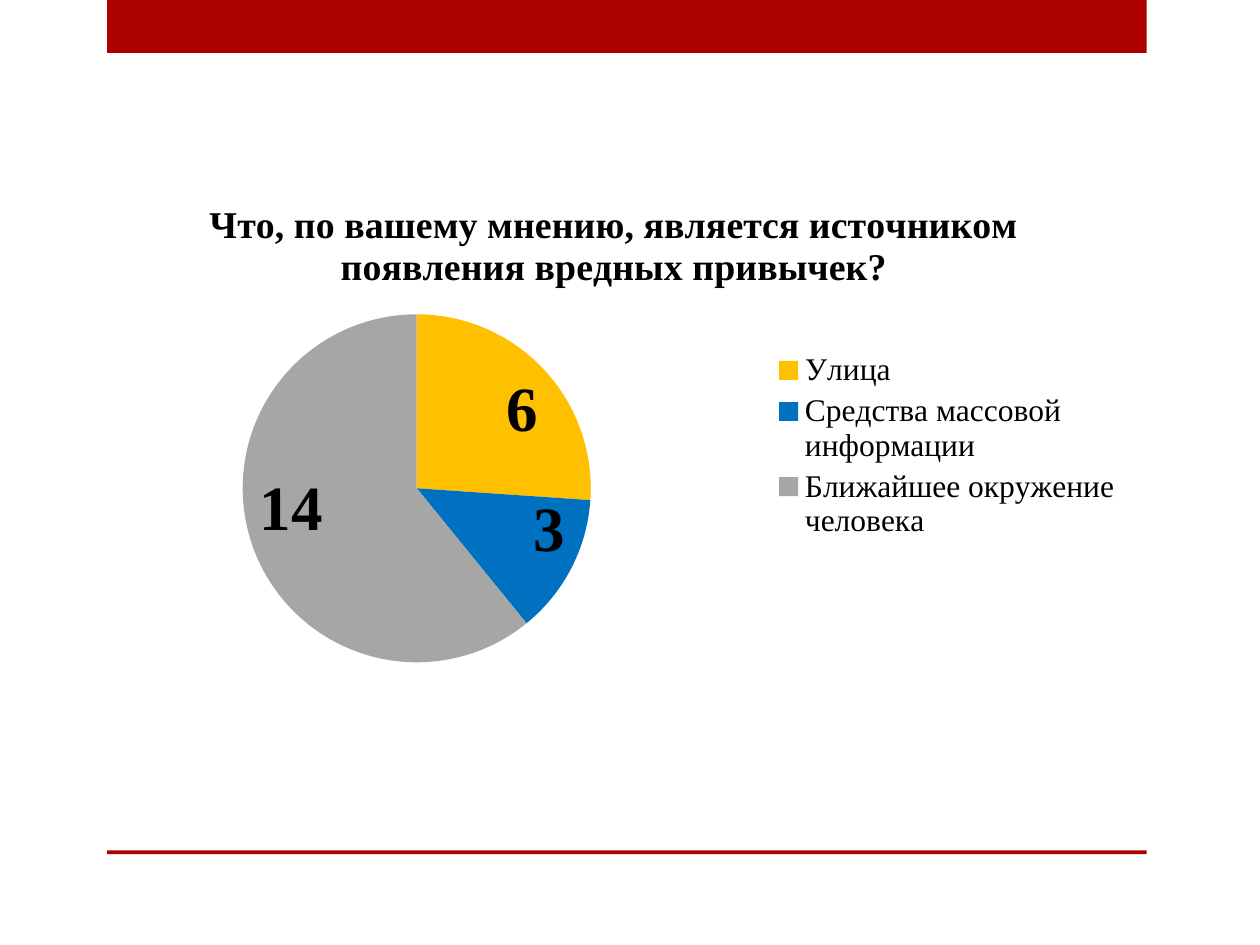
"""Build a survey slide with a pie chart between two red bars."""
from pptx import Presentation, util as u
from pptx.chart.data import CategoryChartData
from pptx.dml.color import RGBColor
from pptx.enum import chart as ch, shapes
from pptx.oxml import parse_xml
from pptx.oxml.ns import nsdecls

TITLE = "Что, по вашему мнению, является источником появления вредных привычек?"
RED = RGBColor(0xAD, 0x01, 0x01)
BLACK = RGBColor(0, 0, 0)
GOLD = RGBColor(0xFF, 0xC0, 0x00)
BLUE = RGBColor(0x00, 0x70, 0xC0)
GRAY = RGBColor(0xA6, 0xA6, 0xA6)
FACE = "Times New Roman"
DATA = [
    ("Улица", 6, GOLD),
    ("Средства массовой информации", 3, BLUE),
    ("Ближайшее окружение человека", 14, GRAY),
]
BARS = [(0, 0.42), (6.75, 0.03)]
CHART = (0.75, 1.39, 8.25, 4.25)
PIE = (0.14, 0.26, 0.34, 0.65)
KEY = (0.65, 0.32, 0.34, 0.37)


def style(font, size, bold=False, color=BLACK):
    font.name, font.size, font.bold = FACE, u.Pt(size), bold
    font.color.rgb = color


def write(frame, words, size=18, **form):
    frame.text = words
    style(frame.paragraphs[0].runs[0].font, size, **form)


def layout(box, inner=False):
    target = '<c:layoutTarget val="inner"/>' if inner else ""
    modes = "".join(f'<c:{k}Mode val="edge"/>' for k in "xy")
    sizes = "".join(f'<c:{k} val="{v}"/>' for k, v in zip("xywh", box))
    return parse_xml(f'<c:layout {nsdecls("c")}><c:manualLayout>'
                     f'{target}{modes}{sizes}</c:manualLayout></c:layout>')


def add_bar(slide, top, high):
    box = map(u.Inches, (0.85, top, 8.25, high))
    bar = slide.shapes.add_shape(shapes.MSO_SHAPE.RECTANGLE, *box)
    bar.shadow.inherit = False
    bar.fill.solid()
    bar.fill.fore_color.rgb = RED
    bar.line.fill.background()


def add_pie(slide):
    names, vals, colors = zip(*DATA)
    data = CategoryChartData()
    data.categories = names
    data.add_series(TITLE, vals)
    chart = slide.shapes.add_chart(
        ch.XL_CHART_TYPE.PIE, *map(u.Inches, CHART), data).chart
    style(chart.font, 18)
    write(chart.chart_title.text_frame, TITLE, size=21.6, bold=True)
    chart.chart_title.include_in_layout = False

    chart.has_legend = True
    key = chart.legend
    key.position = ch.XL_LEGEND_POSITION.RIGHT
    key.include_in_layout = False
    style(key.font, 18)
    key._element.find("{*}legendPos").addnext(layout(KEY))

    area = chart._chartSpace.chart.plotArea
    for old in area.findall("{*}layout"):
        area.remove(old)
    area.insert(0, layout(PIE, inner=True))

    plot = chart.plots[0]
    plot.vary_by_categories = True
    for i, color in enumerate(colors):
        fill = plot.series[0].points[i].format.fill
        fill.solid()
        fill.fore_color.rgb = color
    plot.has_data_labels = True
    tags = plot.data_labels
    tags.show_value = True
    tags.show_percentage = False
    tags.position = ch.XL_LABEL_POSITION.INSIDE_END
    style(tags.font, 36, bold=True)


def main():
    deck = Presentation()
    deck.slide_width, deck.slide_height = u.Inches(10), u.Inches(7.5)
    slide = deck.slides.add_slide(deck.slide_layouts[6])
    for top, high in BARS:
        add_bar(slide, top, high)
    add_pie(slide)
    deck.save("out.pptx")


if __name__ == "__main__":
    main()
